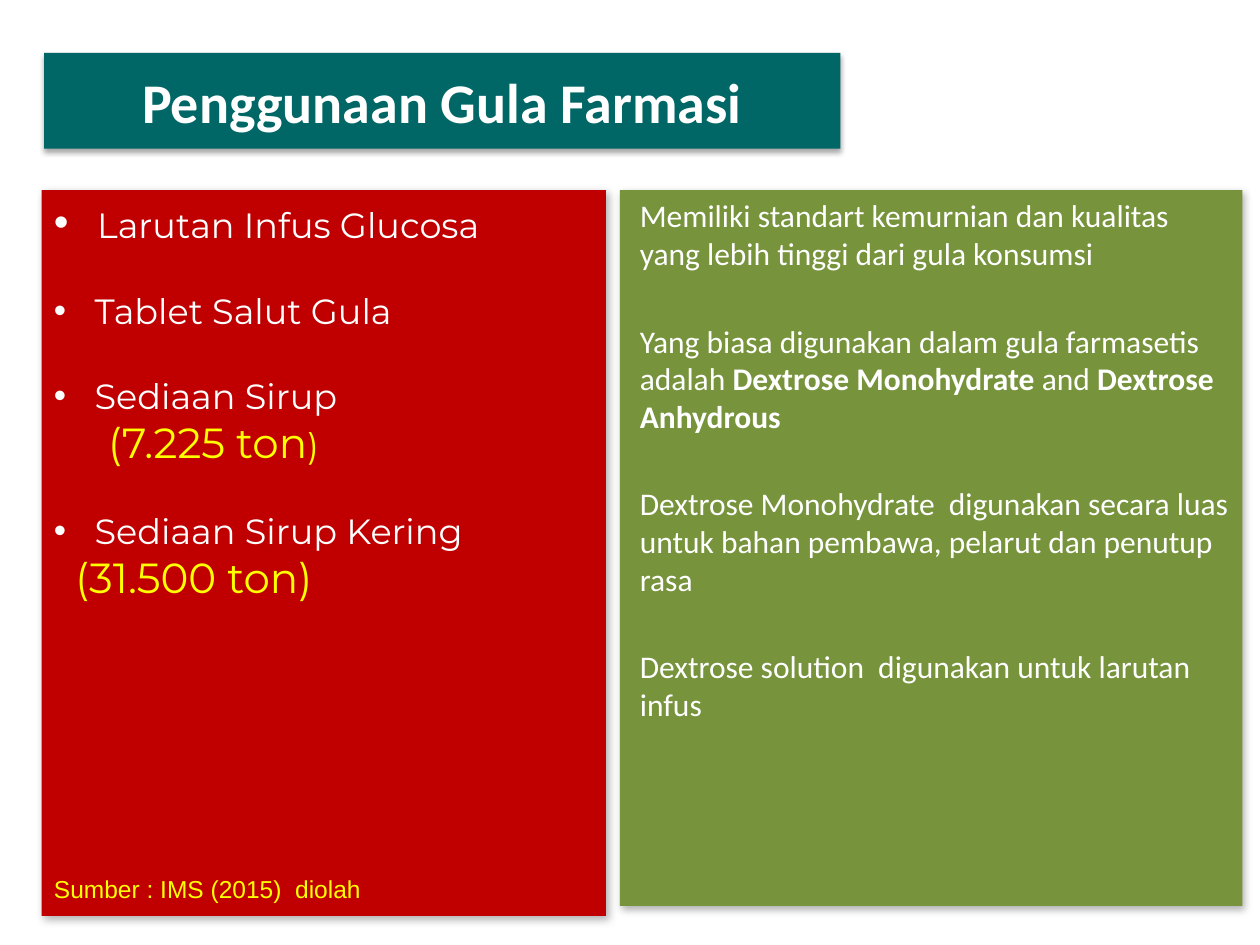
import pptx
import pptx.dml.color
import pptx.enum.shapes
import pptx.enum.text
import pptx.oxml
import pptx.oxml.ns
import pptx.util
from pptx.util import Inches

RGBColor = pptx.dml.color.RGBColor
TEAL = RGBColor(0x00, 0x66, 0x66)
RED = RGBColor(0xC0, 0x00, 0x00)
GREEN = RGBColor(0x77, 0x93, 0x3C)
WHITE = RGBColor(0xFF, 0xFF, 0xFF)
YELLOW = RGBColor(0xFF, 0xFF, 0x00)


def add_panel(slide, box, fill, opacity, blur, distance, angle):
    """Add a filled rectangle with a soft outer shadow and return it."""
    shape = slide.shapes.add_shape(pptx.enum.shapes.MSO_SHAPE.RECTANGLE, *box)
    shape.fill.solid()
    shape.fill.fore_color.rgb = fill
    shape.line.fill.background()
    shape.shadow.inherit = False
    effects = shape._element.spPr.find(pptx.oxml.ns.qn("a:effectLst"))
    effects.append(pptx.oxml.parse_xml(
        f'<a:outerShdw {pptx.oxml.ns.nsdecls("a")} blurRad="{pptx.util.Pt(blur)}" '
        f'dist="{pptx.util.Pt(distance)}" dir="{angle * 60000}" algn="ctr" rotWithShape="0">'
        f'<a:srgbClr val="000000"><a:alpha val="{opacity * 1000}"/></a:srgbClr></a:outerShdw>'))
    shape.text_frame.word_wrap = True
    shape.text_frame.vertical_anchor = pptx.enum.text.MSO_ANCHOR.TOP
    return shape


def add_run(paragraph, text, font_name, size, color, bold=False):
    """Add one formatted run to a paragraph."""
    run = paragraph.add_run()
    run.text = text
    run.font.name = font_name
    run.font.size = pptx.util.Pt(size)
    run.font.color.rgb = color
    run.font.bold = bold


def next_paragraph(frame, index, margin, space_before=0):
    """Return a left-aligned paragraph, with space above all but the first."""
    paragraph = frame.add_paragraph() if index else frame.paragraphs[0]
    paragraph.alignment = pptx.enum.text.PP_ALIGN.LEFT
    paragraph._p.get_or_add_pPr().set("marL", str(margin))
    if index:
        paragraph.space_before = pptx.util.Pt(space_before)
    return paragraph


def add_bullet(paragraph, hanging):
    """Give a paragraph a round bullet with a hanging indent."""
    properties = paragraph._p.get_or_add_pPr()
    properties.set("indent", str(-hanging))
    for tag in ('buFont typeface="Arial"', 'buChar char="•"'):
        properties.append(pptx.oxml.parse_xml(f'<a:{tag} {pptx.oxml.ns.nsdecls("a")}/>'))


def add_title(slide, box):
    """Place the title banner."""
    frame = add_panel(slide, box, TEAL, 35, 3.1, 1.8, 90).text_frame
    frame.vertical_anchor = pptx.enum.text.MSO_ANCHOR.MIDDLE
    paragraph = frame.paragraphs[0]
    paragraph.alignment = pptx.enum.text.PP_ALIGN.CENTER
    add_run(paragraph, "Penggunaan Gula Farmasi", "Calibri", 32, WHITE, True)


def add_products(slide, box):
    """Place the product list with its tonnages and the source line."""
    left, top, width, height = box
    frame = add_panel(slide, box, RED, 30, 4.5, 2.6, 53).text_frame
    hanging = Inches(0.25)
    products = [
        ("Larutan Infus Glucosa", ("Arial", 24), None, []),
        ("Tablet Salut Gula", ("Montserrat", 20), None, []),
        ("Sediaan Sirup", ("Montserrat", 20), Inches(0.43), [("(7.225 ton", 24), (")", 20)]),
        ("Sediaan Sirup Kering", ("Montserrat", 20), Inches(0.17), [("(31.500 ton)", 24)]),
    ]
    for index, (name, lead, margin, tonnage) in enumerate(products):
        paragraph = next_paragraph(frame, index, hanging, 24.4)
        add_bullet(paragraph, hanging)
        add_run(paragraph, " ", *lead, WHITE)
        add_run(paragraph, name, "Montserrat", 20, WHITE)
        if tonnage:
            paragraph = next_paragraph(frame, index, margin)
            for text, size in tonnage:
                add_run(paragraph, text, "Montserrat", size, YELLOW)

    source = slide.shapes.add_textbox(left, top + height - Inches(0.38), Inches(2.7), Inches(0.34))
    source.text_frame.word_wrap = False
    add_run(source.text_frame.paragraphs[0], "Sumber : IMS (2015)  diolah", "Arial", 14, YELLOW)


def add_explanation(slide, box):
    """Place the paragraphs on pharmaceutical sugar."""
    frame = add_panel(slide, box, GREEN, 30, 4.5, 2.6, 53).text_frame
    frame.margin_right = Inches(0.08)
    paragraphs = [
        [("Memiliki standart kemurnian dan kualitas yang lebih tinggi dari gula konsumsi", False)],
        [("Yang biasa digunakan dalam gula farmasetis adalah ", False),
         ("Dextrose Monohydrate ", True), ("and ", False), ("Dextrose Anhydrous", True)],
        [("Dextrose Monohydrate  digunakan secara luas untuk bahan pembawa, "
          "pelarut dan penutup rasa", False)],
        [("Dextrose solution  digunakan untuk larutan infus", False)],
    ]
    for index, runs in enumerate(paragraphs):
        paragraph = next_paragraph(frame, index, Inches(0.06), 28.3)
        for text, bold in runs:
            add_run(paragraph, text, "Calibri", 18, WHITE, bold)


def main():
    """Build and save the presentation."""
    presentation = pptx.Presentation()
    presentation.slide_width, presentation.slide_height = Inches(10), Inches(7.5)
    slide = presentation.slides.add_slide(presentation.slide_layouts[6])
    add_title(slide, (Inches(0.35), Inches(0.42), Inches(6.32), Inches(0.76)))
    add_products(slide, (Inches(0.33), Inches(1.51), Inches(4.48), Inches(5.76)))
    add_explanation(slide, (Inches(4.92), Inches(1.51), Inches(4.94), Inches(5.68)))
    presentation.save("out.pptx")


if __name__ == "__main__":
    main()
